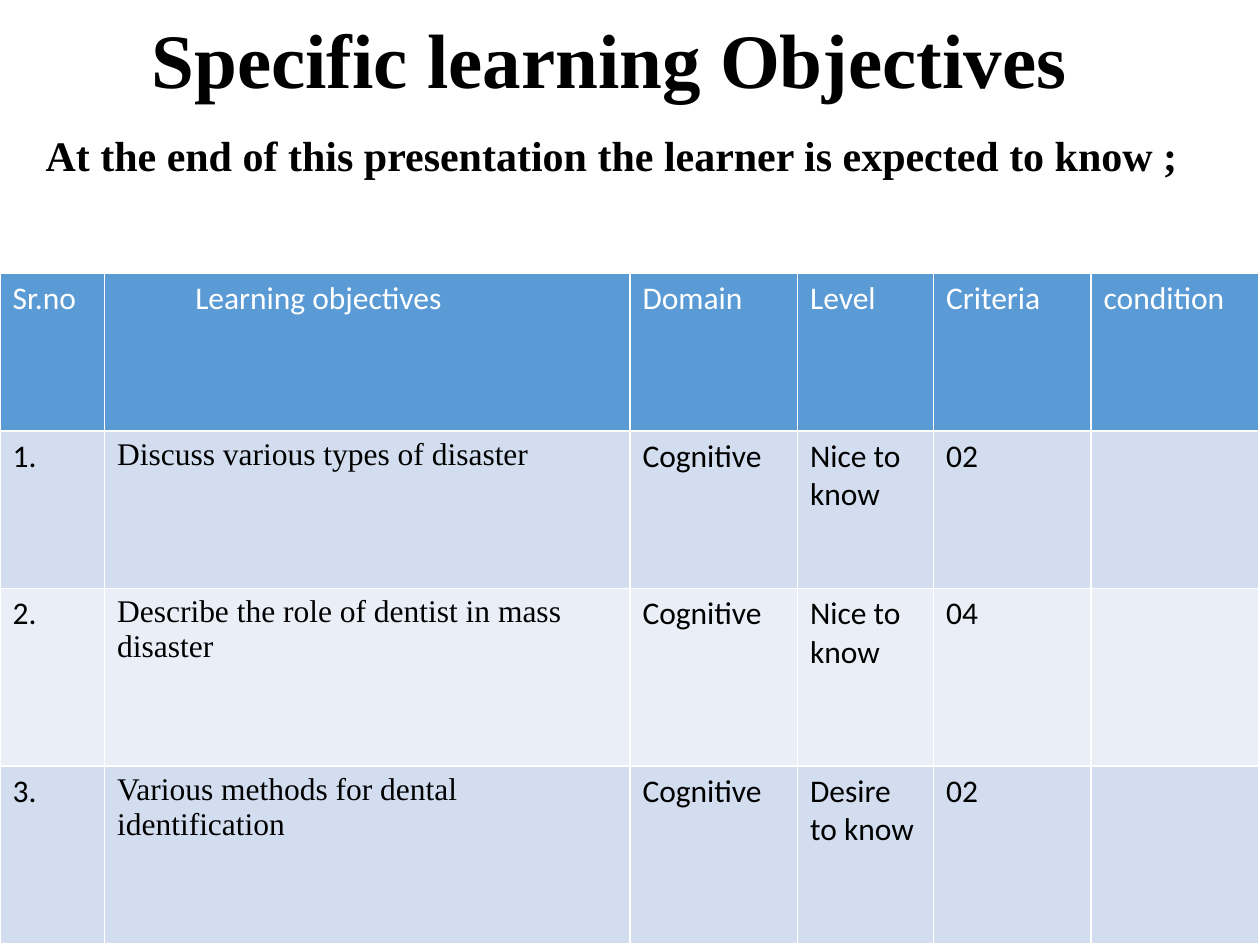
from pptx import Presentation
from pptx.dml.color import RGBColor
from pptx.enum import text
from pptx.util import Inches, Pt


def color(value):
    return RGBColor.from_string(value)


def style(p, size, name, value, bold):
    for r in p.runs:
        r.font.size = Pt(size)
        r.font.name = name
        r.font.bold = bold
        r.font.color.rgb = color(value)


prs = Presentation()
prs.slide_width = Inches(10)
prs.slide_height = Inches(7.5)
s = prs.slides.add_slide(prs.slide_layouts[6])

rows = [
    ["Sr.no", "Learning objectives", "Domain", "Level", "Criteria", "condition"],
    ["1.", "Discuss various types of disaster", "Cognitive", "Nice to know", "02", ""],
    ["2.", "Describe the role of dentist in mass disaster", "Cognitive", "Nice to know", "04", ""],
    ["3.", "Various methods for dental identification", "Cognitive", "Desire to know", "02", ""],
]
widths = [0.83, 4.17, 1.33, 1.08, 1.25, 1.33]
heights = [1.25, 1.25, 1.41, 1.41]
fills = ["5B9BD5", "D2DEEF", "EAEFF7", "D2DEEF"]

table = s.shapes.add_table(
    len(rows), len(widths), Inches(0), Inches(2.17), Inches(10), Inches(5.33)
).table
for col, width in zip(table.columns, widths):
    col.width = Inches(width)
for i, (row, height, fill) in enumerate(zip(rows, heights, fills)):
    table.rows[i].height = Inches(height)
    for j, label in enumerate(row):
        cell = table.cell(i, j)
        cell.fill.solid()
        cell.fill.fore_color.rgb = color(fill)
        cell.text = label
        name = "Times New Roman" if i > 0 and j == 1 else "Calibri"
        style(cell.text_frame.paragraphs[0], 18, name, "000000" if i else "FFFFFF", False)
table.cell(0, 1).margin_left = Inches(0.72)

headings = [
    ("Specific learning Objectives ", -0.15, -0.1, 10.13, 1.21, 44, 0.9, text.MSO_ANCHOR.MIDDLE),
    ("At the end of this presentation the learner is expected to know ;",
     -0.5, 0.98, 10.71, 0.5, 24, 1.0, text.MSO_ANCHOR.TOP),
]
for label, left, top, width, height, size, spacing, anchor in headings:
    sp = s.shapes.add_textbox(Inches(left), Inches(top), Inches(width), Inches(height))
    tf = sp.text_frame
    tf.word_wrap = True
    tf.vertical_anchor = anchor
    tf.text = label
    p = tf.paragraphs[0]
    p.alignment = text.PP_ALIGN.CENTER
    p.line_spacing = spacing
    style(p, size, "Times New Roman", "000000", True)

prs.save("out.pptx")
